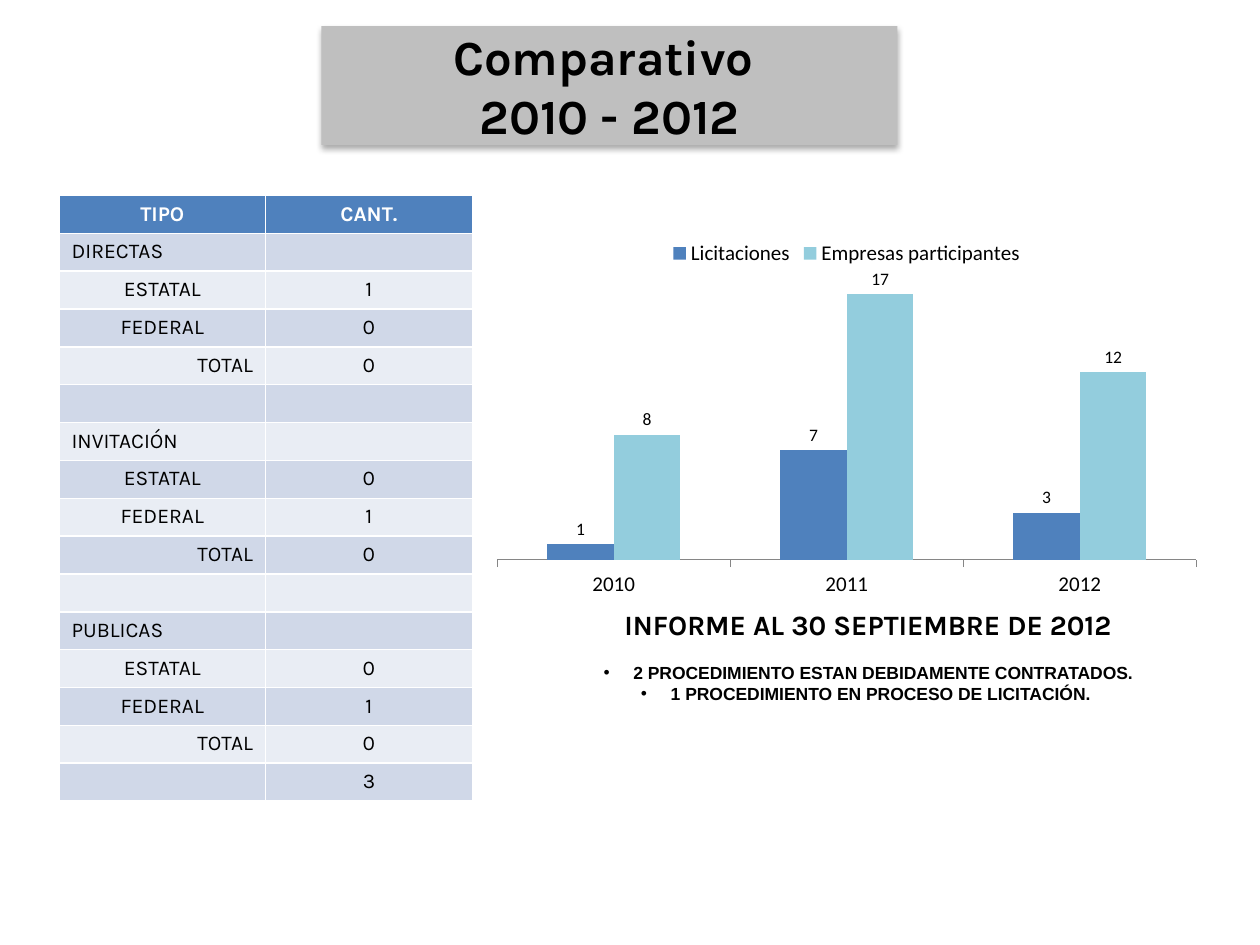
"""Build the 2010 - 2012 tender comparison slide."""
import pptx
import pptx.chart.data
import pptx.dml.color
import pptx.enum.chart
import pptx.enum.shapes
import pptx.enum.text
import pptx.oxml
import pptx.oxml.ns
import pptx.util

Cm = pptx.util.Cm
Pt = pptx.util.Pt
RGBColor = pptx.dml.color.RGBColor
ALIGN = pptx.enum.text.PP_ALIGN
NS = pptx.oxml.ns.nsdecls("a")

BLACK = RGBColor(0x00, 0x00, 0x00)
WHITE = RGBColor(0xFF, 0xFF, 0xFF)
GRAY = RGBColor(0xBF, 0xBF, 0xBF)
BLUE = RGBColor(0x4F, 0x81, 0xBD)
AQUA = RGBColor(0x93, 0xCD, 0xDD)
BAND_DARK = RGBColor(0xD0, 0xD8, 0xE8)
BAND_LIGHT = RGBColor(0xE9, 0xED, 0xF4)


def set_font(font, color, **values):
    for name, value in values.items():
        setattr(font, name, value)
    font.color.rgb = color


def write(p, text, align, color, **values):
    p.alignment = align
    r = p.add_run()
    r.text = text
    set_font(r.font, color, **values)


prs = pptx.Presentation()
prs.slide_width = Cm(25.4)
prs.slide_height = Cm(19.05)
s = prs.slides.add_slide(prs.slide_layouts[6])

sp = s.shapes.add_textbox(Cm(10.11), Cm(12.12), Cm(14.78), Cm(3.07))
tf = sp.text_frame
tf.word_wrap = True
write(tf.paragraphs[0], "INFORME AL 30 SEPTIEMBRE DE 2012", ALIGN.CENTER, BLACK,
      name="Karla", size=Pt(16), bold=True)
tf.paragraphs[0].space_after = Pt(12)
for text in ("2 PROCEDIMIENTO ESTAN DEBIDAMENTE CONTRATADOS.",
             "1 PROCEDIMIENTO EN PROCESO DE LICITACIÓN. "):
    p = tf.add_paragraph()
    write(p, text, ALIGN.CENTER, BLACK, name="Arial", size=Pt(10), bold=True)
    pPr = p._p.get_or_add_pPr()
    pPr.set("marL", str(Cm(0.6)))
    pPr.set("indent", str(-Cm(0.6)))
    pPr.append(pptx.oxml.parse_xml(f'<a:buFont {NS} typeface="Arial"/>'))
    pPr.append(pptx.oxml.parse_xml(f'<a:buChar {NS} char="•"/>'))

sp = s.shapes.add_shape(pptx.enum.shapes.MSO_SHAPE.RECTANGLE,
                        Cm(6.48), Cm(0.53), Cm(11.61), Cm(2.39))
sp.fill.solid()
sp.fill.fore_color.rgb = GRAY
sp.line.fill.background()
sp._element.spPr.append(pptx.oxml.parse_xml(
    f'<a:effectLst {NS}><a:outerShdw blurRad="{Pt(3.5)}" dist="{Pt(2.2)}" dir="5400000" '
    'algn="ctr" rotWithShape="0"><a:srgbClr val="000000"><a:alpha val="32000"/>'
    '</a:srgbClr></a:outerShdw></a:effectLst>'))
tf = sp.text_frame
tf.vertical_anchor = pptx.enum.text.MSO_ANCHOR.MIDDLE
for p, text in ((tf.paragraphs[0], "Comparativo "), (tf.add_paragraph(), "2010 - 2012")):
    write(p, text, ALIGN.CENTER, BLACK, name="Karla", size=Pt(28), bold=True)

rows = [("TIPO", "CANT.")]
for group, state, federal in (("DIRECTAS", 1, 0), ("INVITACIÓN", 0, 1), ("PUBLICAS", 0, 1)):
    rows += [(group, ""), ("ESTATAL", state), ("FEDERAL", federal), ("TOTAL", 0), ("", "")]
rows[-1] = ("", 3)
aligns = {"TIPO": ALIGN.CENTER, "ESTATAL": ALIGN.CENTER,
          "FEDERAL": ALIGN.CENTER, "TOTAL": ALIGN.RIGHT}

table = s.shapes.add_table(len(rows), 2, Cm(1.19), Cm(3.94), Cm(8.33), Cm(12.19)).table
for i, row in enumerate(rows):
    for j, value in enumerate(row):
        cell = table.cell(i, j)
        cell.fill.solid()
        cell.fill.fore_color.rgb = BLUE if i == 0 else BAND_DARK if i % 2 else BAND_LIGHT
        p = cell.text_frame.paragraphs[0]
        if value == "":
            p._p.append(pptx.oxml.parse_xml(f'<a:endParaRPr {NS} sz="1200"/>'))
        else:
            align = ALIGN.CENTER if j else aligns.get(value, ALIGN.LEFT)
            write(p, str(value), align, BLACK if i else WHITE,
                  name="Karla", size=Pt(12), bold=i == 0)

data = pptx.chart.data.CategoryChartData()
data.categories = ["2010", "2011", "2012"]
data.add_series("Licitaciones", (1, 7, 3))
data.add_series("Empresas participantes", (8, 17, 12))
chart = s.shapes.add_chart(pptx.enum.chart.XL_CHART_TYPE.COLUMN_CLUSTERED,
                           Cm(9.73), Cm(4.57), Cm(14.68), Cm(7.62), data).chart
set_font(chart.font, BLACK, name="Calibri", size=Pt(18))
chart.has_title = False
chart.has_legend = True
chart.legend.position = pptx.enum.chart.XL_LEGEND_POSITION.TOP
chart.legend.include_in_layout = False
set_font(chart.legend.font, BLACK, name="Calibri", size=Pt(12))
chart.value_axis.visible = False
chart.value_axis.has_major_gridlines = False
chart.value_axis.minimum_scale = 0
chart.value_axis.maximum_scale = 18
axis = chart.category_axis
axis.major_tick_mark = pptx.enum.chart.XL_TICK_MARK.OUTSIDE
axis.format.line.color.rgb = RGBColor(0x86, 0x86, 0x86)
set_font(axis.tick_labels.font, BLACK, name="Calibri", size=Pt(12))
plot = chart.plots[0]
plot.gap_width = 150
plot.overlap = 0
plot.vary_by_categories = False
for series, color in zip(plot.series, (BLUE, AQUA)):
    series.format.fill.solid()
    series.format.fill.fore_color.rgb = color
    labels = series.data_labels
    labels.show_value = True
    labels.position = pptx.enum.chart.XL_LABEL_POSITION.OUTSIDE_END
    set_font(labels.font, BLACK, name="Calibri", size=Pt(10))

prs.save("out.pptx")
